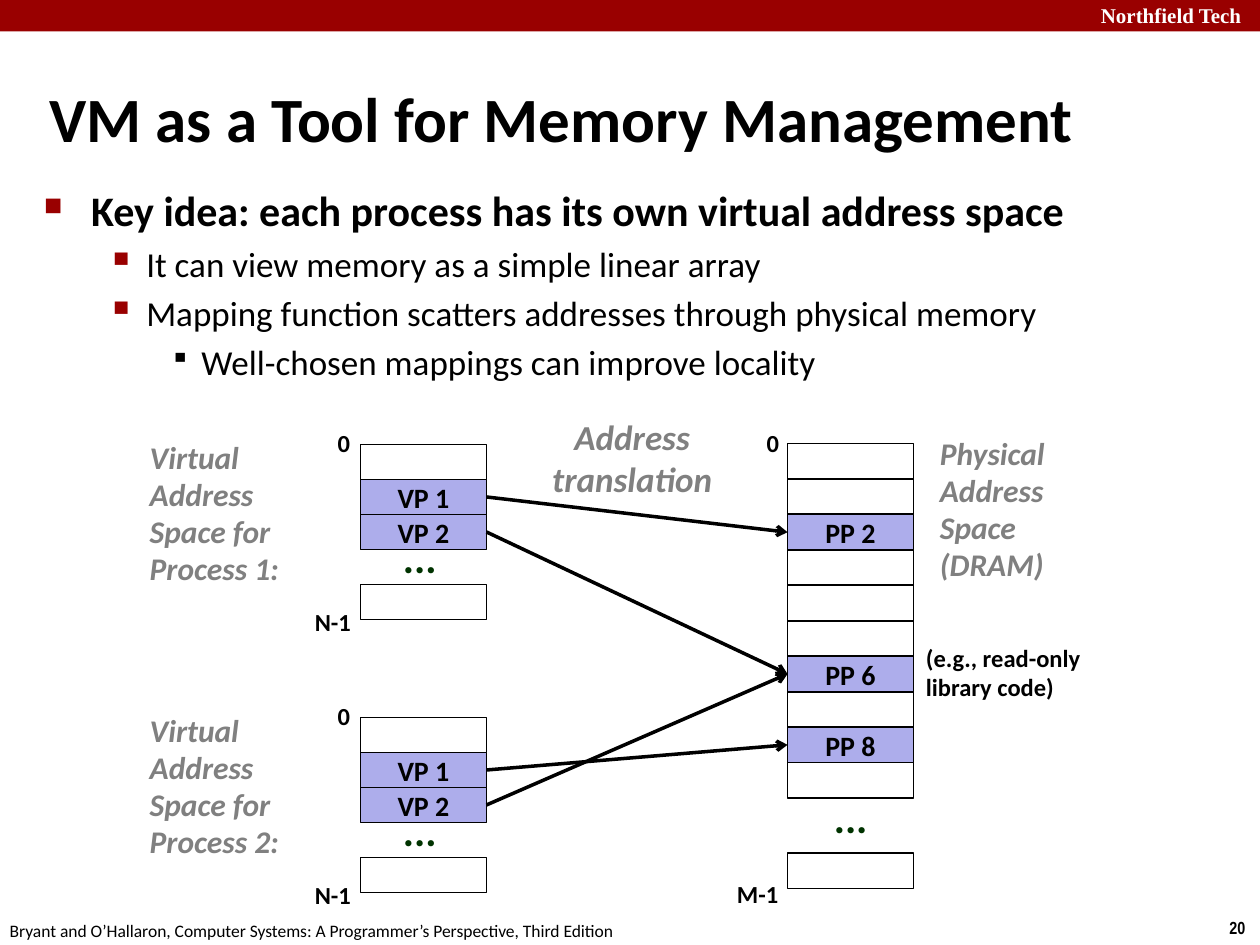
"""Builds a slide on virtual memory as a tool for memory management."""
from lxml import etree
from pptx import Presentation
from pptx.dml.color import RGBColor
from pptx.enum.shapes import MSO_CONNECTOR, MSO_SHAPE
from pptx.enum.text import MSO_ANCHOR, MSO_AUTO_SIZE, PP_ALIGN
from pptx.oxml.ns import qn
from pptx.util import Pt

RECT = MSO_SHAPE.RECTANGLE
STRAIGHT = MSO_CONNECTOR.STRAIGHT
MIDDLE = MSO_ANCHOR.MIDDLE
GROW, FIXED = MSO_AUTO_SIZE.SHAPE_TO_FIT_TEXT, MSO_AUTO_SIZE.NONE
LEFT, CENTER = PP_ALIGN.LEFT, PP_ALIGN.CENTER
COLORS = {
    "red": "990000",
    "white": "FFFFFF",
    "black": "000000",
    "gray": "808080",
    "green": "003300",
    "page": "ADADEB",
}
CELL_WIDTH = 72


def add_run(paragraph, words, size, color="black", bold=True, italic=False, font="Calibri"):
    run = paragraph.add_run()
    run.text = words
    run.font.size = Pt(size)
    run.font.name = font
    run.font.bold = bold
    run.font.italic = italic
    run.font.color.rgb = RGBColor.from_string(COLORS[color])


def add_label(left, top, width, height, lines, size, wrap=False, align=LEFT, spacing=0.98, **style):
    frame = slide.shapes.add_textbox(Pt(left), Pt(top), Pt(width), Pt(height)).text_frame
    frame.word_wrap = wrap
    frame.auto_size = GROW
    for number, line in enumerate(lines):
        paragraph = frame.add_paragraph() if number else frame.paragraphs[0]
        paragraph.alignment = align
        paragraph.line_spacing = spacing
        add_run(paragraph, line, size, **style)
    return frame


prs = Presentation()
prs.slide_width, prs.slide_height = Pt(720), Pt(540)
slide = prs.slides.add_slide(prs.slide_layouts[6])

banner = slide.shapes.add_shape(RECT, 0, 0, Pt(720), Pt(18))
banner.shadow.inherit = False
banner.fill.solid()
banner.fill.fore_color.rgb = RGBColor.from_string(COLORS["red"])
banner.line.fill.background()
add_label(622, -2, 103, 21.6, ["Northfield Tech"], 12, wrap=True, spacing=1,
          color="white", font="Times New Roman")
add_label(695.5, 520.5, 24.5, 19.4, ["20"], 10, spacing=1, font="Arial Narrow")
add_label(-1.5, 522, 366, 19.4,
          ["Bryant and O’Hallaron, Computer Systems: A Programmer’s Perspective, Third Edition"],
          10, spacing=1, bold=False)

title = add_label(21, 44.6, 678, 45.4, ["VM as a Tool for Memory Management"], 36,
                  wrap=True, spacing=1)
title.auto_size = FIXED
title.vertical_anchor = MIDDLE

BULLET_LEVELS = [
    {"size": 24, "margin": 27, "hang": 27, "char": "■", "percent": 60, "color": "red"},
    {"size": 20, "margin": 58.5, "hang": 22.5, "char": "▪", "percent": 110, "color": "red"},
    {"size": 20, "margin": 90, "hang": 18, "char": "▪", "percent": 80, "color": "black"},
]
KEY_POINTS = [
    (0, "Key idea: each process has its own virtual address space"),
    (1, "It can view memory as a simple linear array"),
    (1, "Mapping function scatters addresses through physical memory"),
    (2, "Well-chosen mappings can improve locality"),
]
body = slide.shapes.add_textbox(Pt(18), Pt(102), Pt(618.5), Pt(99.5)).text_frame
body.word_wrap = True
for number, (depth, point) in enumerate(KEY_POINTS):
    level = BULLET_LEVELS[depth]
    paragraph = body.add_paragraph() if number else body.paragraphs[0]
    paragraph.level = depth
    paragraph.space_before = Pt(level["size"] * 0.2)
    add_run(paragraph, point, level["size"], bold=depth == 0)
    properties = paragraph._p.get_or_add_pPr()
    properties.set("marL", str(Pt(level["margin"])))
    properties.set("indent", str(-Pt(level["hang"])))
    bullet_color = etree.SubElement(properties, qn("a:buClr"))
    etree.SubElement(bullet_color, qn("a:srgbClr"), val=COLORS[level["color"]])
    etree.SubElement(properties, qn("a:buSzPct"), val=str(level["percent"] * 1000))
    etree.SubElement(properties, qn("a:buChar"), char=level["char"])

VIRTUAL_LEFT, VIRTUAL_ROW = 206, 20
PHYSICAL_LEFT, PHYSICAL_TOP, PHYSICAL_ROW = 450, 253.5, 20.25
PROCESS_TOPS = {1: 254, 2: 410}
MAPPINGS = [(1, 1, 2), (1, 2, 6), (2, 2, 6), (2, 1, 8)]

cells = []
for process, top in PROCESS_TOPS.items():
    for row in (0, 1, 2, 4):
        name = f"VP {row}" if row in (1, 2) else ""
        cells.append((VIRTUAL_LEFT, top + row * VIRTUAL_ROW, VIRTUAL_ROW, name))
    add_label(78.5, top - 6.3, 108, 92, [f"Virtual Address Space for Process {process}:"], 18,
              wrap=True, color="gray", italic=True)
    add_label(185.8, top - 12.3, 22.3, 23.8, ["0"], 14)
    add_label(172.8, top + 90.2, 35.3, 23.8, ["N-1"], 14)
    add_label(223.2, top + 50, 33.8, 32.4, ["..."], 24, spacing=0.88, color="green")

for row in range(10):
    name = f"PP {row}" if row in (2, 6, 8) else ""
    cells.append((PHYSICAL_LEFT, PHYSICAL_TOP + row * PHYSICAL_ROW, PHYSICAL_ROW, name))
cells.append((PHYSICAL_LEFT, 487.5, PHYSICAL_ROW, ""))
add_label(530, 245.5, 84, 93, ["Physical", "Address", "Space (DRAM)"], 18,
          wrap=True, color="gray", italic=True)
add_label(522, 365, 114.5, 40.3, ["(e.g., read-only", "library code)"], 14, wrap=True)
add_label(469.4, 452.2, 33.8, 32.4, ["..."], 24, spacing=0.88, color="green")
add_label(431, 242, 22.3, 23.8, ["0"], 14)
add_label(414, 499.7, 38.2, 23.8, ["M-1"], 14)

for left, top, height, name in cells:
    cell = slide.shapes.add_shape(RECT, Pt(left), Pt(top), Pt(CELL_WIDTH), Pt(height))
    cell.shadow.inherit = False
    cell.line.color.rgb = RGBColor.from_string(COLORS["black"])
    cell.line.width = Pt(1)
    if name:
        cell.fill.solid()
        cell.fill.fore_color.rgb = RGBColor.from_string(COLORS["page"])
        cell.text_frame.vertical_anchor = MIDDLE
        cell.text_frame.paragraphs[0].alignment = CENTER
        add_run(cell.text_frame.paragraphs[0], name, 16)
    else:
        cell.fill.background()

for process, virtual_page, physical_page in MAPPINGS:
    start = PROCESS_TOPS[process] + (virtual_page + 0.5) * VIRTUAL_ROW
    end = PHYSICAL_TOP + (physical_page + 0.5) * PHYSICAL_ROW
    mapping = slide.shapes.add_connector(
        STRAIGHT, Pt(VIRTUAL_LEFT + CELL_WIDTH), Pt(start), Pt(PHYSICAL_LEFT), Pt(end))
    mapping.line.color.rgb = RGBColor.from_string(COLORS["black"])
    mapping.line.width = Pt(2)
    etree.SubElement(mapping.line._get_or_add_ln(), qn("a:tailEnd"), type="arrow")
    etree.SubElement(mapping._element.spPr, qn("a:effectLst"))

add_label(308, 234, 106.5, 55.5, ["Address", "translation"], 20, align=CENTER, spacing=1,
          color="gray", italic=True)

prs.save("out.pptx")
